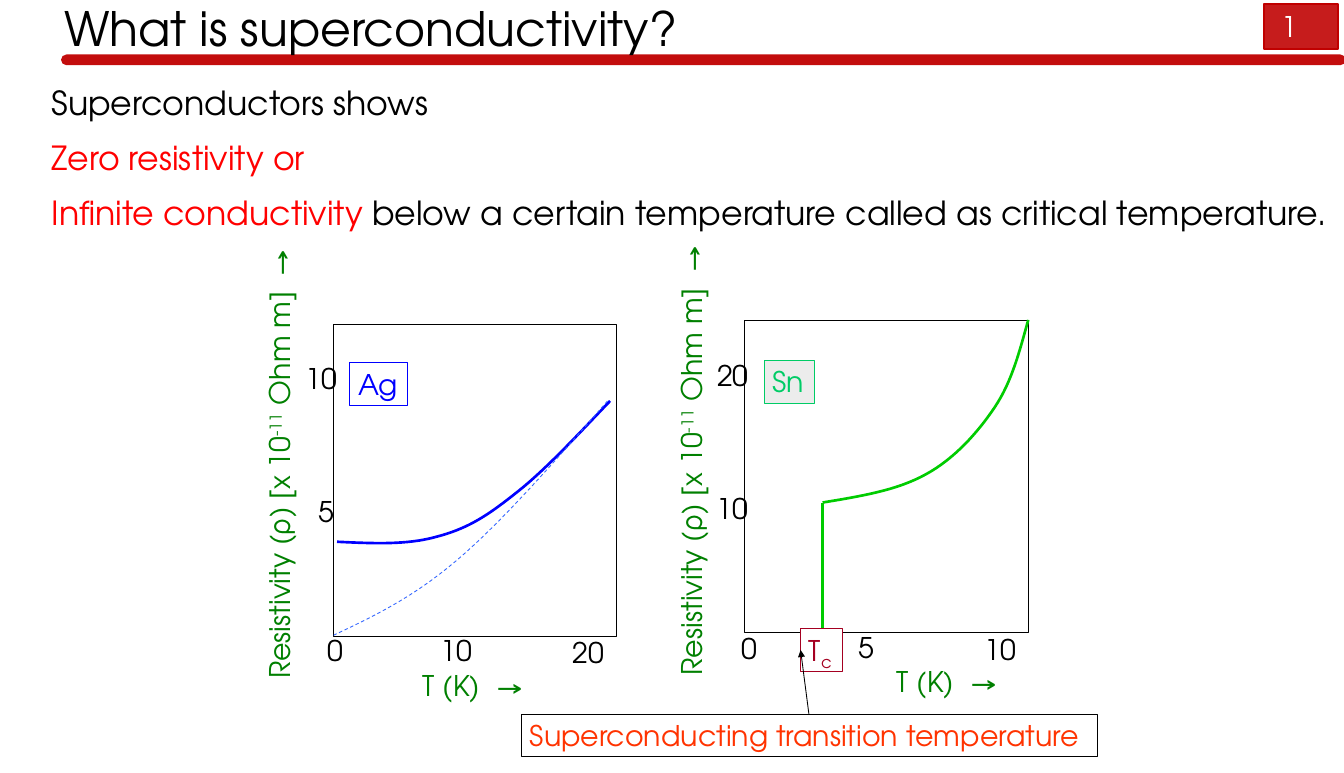
from lxml import etree
from pptx import Presentation
from pptx import util as u
from pptx.dml.color import RGBColor
from pptx.enum import dml, shapes, text
from pptx.oxml.ns import qn

FONT = "TeX Gyre Adventor"
BLACK, WHITE, RED, BAR, GREEN = "000000", "FFFFFF", "FF0000", "C00000", "008000"
BLUE, SN_GREEN, LABEL_GREEN, MAROON = "0000FF", "00CC00", "00CC66", "A50021"
FRAME_W, FRAME_H = 239, 263.5
AXIS_TITLE = [("Resistivity (ρ) [x 10", GREEN), ("-11", GREEN, 30),
              (" Ohm m]  →", GREEN)]


def rgb(color):
    return RGBColor.from_string(color)


def pts(*values):
    return [u.Pt(v) for v in values]


def set_alpha(fill, percent):
    clr = fill._xPr.find(".//" + qn("a:srgbClr"))
    etree.SubElement(clr, qn("a:alpha")).set("val", str(percent * 1000))


def set_line(sp, color, width, dash=None):
    sp.line.color.rgb = rgb(color)
    sp.line.width = u.Pt(width)
    if dash:
        sp.line.dash_style = dash


def set_text(sp, paras, size=24, wrap=False, **spacing):
    """Fill a shape; each paragraph is a list of (text, colour[, baseline %])."""
    tf = sp.text_frame
    frame_format = {"word_wrap": wrap, "vertical_anchor": text.MSO_ANCHOR.TOP}
    for name, value in frame_format.items():
        setattr(tf, name, value)
    for i, runs in enumerate(paras):
        p = tf.add_paragraph() if i else tf.paragraphs[0]
        p.alignment = text.PP_ALIGN.LEFT
        for name, value in spacing.items():
            if i or name != "space_before":
                setattr(p, name, u.Pt(value))
        for words, color, *base in runs:
            r = p.add_run()
            r.text = words
            for name, value in {"name": FONT, "size": u.Pt(size)}.items():
                setattr(r.font, name, value)
            r.font.color.rgb = rgb(color)
            if base:
                r._r.get_or_add_rPr().set("baseline", str(base[0] * 1000))
    return tf


def add_text(s, box, paras, **fmt):
    sp = s.shapes.add_textbox(*pts(*box))
    set_text(sp, paras, **fmt)
    return sp


def add_box(s, box, line, width, fill=None, alpha=None, runs=None):
    sp = s.shapes.add_shape(shapes.MSO_SHAPE.RECTANGLE, *pts(*box))
    sp.shadow.inherit = False
    if fill:
        sp.fill.solid()
        sp.fill.fore_color.rgb = rgb(fill)
        if alpha:
            set_alpha(sp.fill, alpha)
    else:
        sp.fill.background()
    set_line(sp, line, width)
    if runs:
        set_text(sp, [runs], wrap=True)


def add_line(s, ends, color, width):
    cn = s.shapes.add_connector(shapes.MSO_CONNECTOR.STRAIGHT, *pts(*ends))
    set_line(cn, color, width)
    etree.SubElement(cn._element.spPr, qn("a:effectLst"))
    return cn


def bezier(p0, p1, p2, p3, steps=16):
    for k in range(1, steps + 1):
        t = k / steps
        yield tuple((1 - t) ** 3 * a + 3 * t * (1 - t) ** 2 * b
                    + 3 * t * t * (1 - t) * c + t ** 3 * d
                    for a, b, c, d in zip(p0, p1, p2, p3))


def add_curve(s, points, color, width, dash=None):
    """Draw joined cubic segments: a start, then three points per segment."""
    fb = s.shapes.build_freeform(*pts(*points[0]))
    for i in range(0, len(points) - 1, 3):
        fb.add_line_segments([pts(*xy) for xy in bezier(*points[i:i + 4])],
                             close=False)
    sp = fb.convert_to_shape()
    sp.shadow.inherit = False
    sp.fill.background()
    set_line(sp, color, width, dash)


def add_plot(s, x, y, ticks, temp_x):
    """Frame, axis titles and ticks; tick places count from the frame corner."""
    add_text(s, (x - 237, y + 97, 383, 36), [AXIS_TITLE]).rotation = 270
    add_box(s, (x, y, FRAME_W, FRAME_H), BLACK, 0.75)
    add_text(s, (x + temp_x, y + 286.5, 101.5, 36), [[("T (K)  →", GREEN)]])
    for label, dx, dy in ticks:
        width = 14.4 + 13.5 * len(label)
        add_text(s, (x + dx, y + dy, width, 36), [[(label, BLACK)]])


def add_header(s):
    add_box(s, (1066.5, 3.5, 62.5, 38), BAR, 1.5, BAR, 89)
    rule = add_line(s, (56, 50.5, 1131, 50.5), BAR, 9)
    set_alpha(rule.line.fill, 95)
    rule.line._get_or_add_ln().set("cap", "rnd")
    add_text(s, (1074, 4.5, 44, 36), [[("1", WHITE)]], wrap=True)
    title = add_text(s, (47, -4.5, 921.5, 56),
                     [[("What is superconductivity?", BLACK)]], size=40, wrap=True)
    title.text_frame.vertical_anchor = text.MSO_ANCHOR.MIDDLE


def add_definition(s):
    body = add_text(s, (36.5, 65.5, 1122, 134), [
        [("Superconductors shows", BLACK)],
        [("Zero resistivity or", RED)],
        [("Infinite conductivity ", RED),
         ("below a certain temperature called as critical temperature.", BLACK)],
    ], size=28, wrap=True, space_before=5.6, space_after=7.1)
    body.text_frame.vertical_anchor = text.MSO_ANCHOR.MIDDLE


def add_silver(s):
    add_plot(s, 281, 273.5, [("0", -12, 257), ("10", 84, 257), ("20", 195, 258.5),
                             ("5", -19.5, 139.5), ("10", -30.5, 27.5)], 68.5)
    add_curve(s, [(284.4, 457.2), (313.9, 458.6), (343.4, 460.1), (368.6, 452.9),
                  (393.1, 446.4), (409, 437), (433.4, 417.6),
                  (457.9, 398.9), (486, 368.6), (514.8, 338.4)], BLUE, 2.25)
    add_curve(s, [(512.6, 338.4), (468, 389.5), (424.1, 439.9), (385.2, 473),
                  (347, 505.4), (313.9, 520.6), (280.8, 536.4)],
              "3366FF", 0.75, dml.MSO_LINE.DASH)
    add_box(s, (295, 306, 49, 36), BLUE, 0.5, WHITE, 80, [("Ag", BLUE)])


def add_tin(s):
    add_plot(s, 628.5, 270.5, [("0", -10, 258.5), ("5", 88.5, 258), ("10", 195, 259.5),
                               ("10", -31, 140), ("20", -30.5, 28)], 121)
    add_curve(s, [(867.6, 270), (860.4, 295.9), (853.9, 321.8), (839.5, 343.4),
                  (825.1, 365), (805, 387.4), (781.2, 400.3),
                  (756.7, 414), (725, 419), (694.1, 424.1)], SN_GREEN, 2.25)
    add_line(s, (694.1, 424.1, 694.1, 535), SN_GREEN, 2.25)
    add_box(s, (645, 304, 42, 36), LABEL_GREEN, 0.5, "EAEAEA", 90,
            [("Sn", LABEL_GREEN)])


def add_transition(s):
    add_box(s, (675.5, 530.5, 35.5, 36), MAROON, 0.5, WHITE, None,
            [("T", MAROON), ("c", MAROON, -25)])
    arrow = add_line(s, (682.5, 602.5, 675.5, 548.5), BLACK, 0.75)
    etree.SubElement(arrow.line._get_or_add_ln(), qn("a:tailEnd")).set("type", "triangle")
    add_box(s, (440, 602.5, 485.5, 36), BLACK, 0.5, WHITE, None,
            [("Superconducting transition temperature", "FF3300")])


def main():
    prs = Presentation()
    prs.slide_width, prs.slide_height = pts(1134, 652.3)
    s = prs.slides.add_slide(prs.slide_layouts[6])
    for add_part in (add_header, add_definition, add_silver, add_tin, add_transition):
        add_part(s)
    prs.save("out.pptx")


if __name__ == "__main__":
    main()
